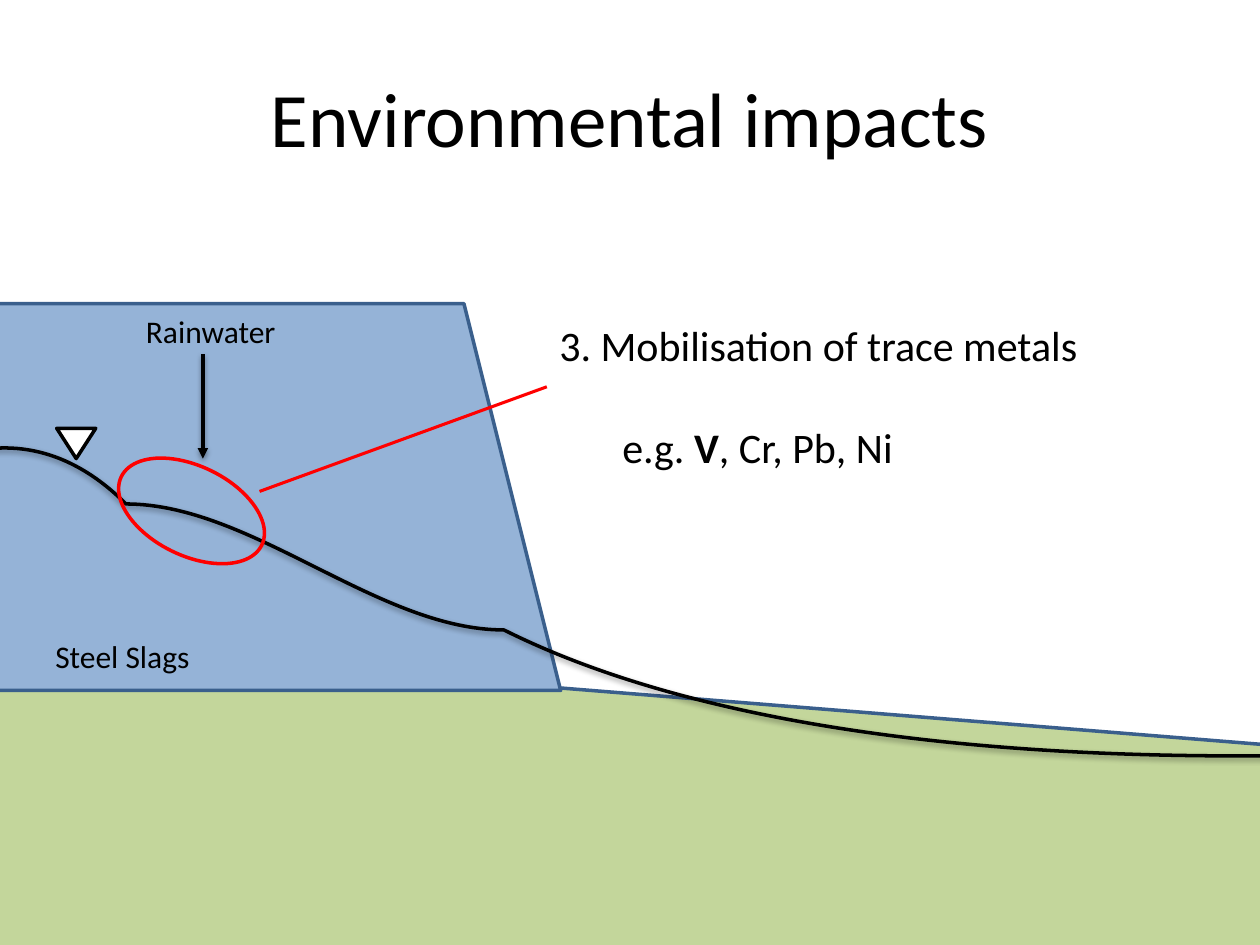
from dataclasses import dataclass

from lxml.etree import SubElement
from pptx import Presentation
from pptx.dml.color import RGBColor
from pptx.enum.shapes import MSO_CONNECTOR, MSO_SHAPE
from pptx.enum.text import MSO_ANCHOR, MSO_AUTO_SIZE, PP_ALIGN
from pptx.oxml.ns import qn
from pptx.util import Inches, Pt


@dataclass(frozen=True)
class Theme:
    font: str = "Calibri"
    black: str = "000000"
    white: str = "FFFFFF"
    red: str = "FF0000"
    ground: str = "C3D69B"
    slag: str = "95B3D7"
    edge: str = "3A5F8C"
    title: int = 44
    body: int = 24
    label: int = 18
    line: float = 2


class Canvas:
    def __init__(self, slide, theme):
        self.s = slide
        self.t = theme

    def stroke(self, sp, color, width=None):
        sp.line.color.rgb = RGBColor.from_string(color)
        sp.line.width = Pt(width or self.t.line)

    def effects(self, sp, shadow):
        """Replace the inherited shadow with a soft one below, or with none."""
        lst = SubElement(sp._element.spPr, qn("a:effectLst"))
        if shadow:
            outer = SubElement(lst, qn("a:outerShdw"), blurRad=str(Pt(3.1)),
                               dist=str(Pt(1.6)), dir="5400000", rotWithShape="0")
            clr = SubElement(outer, qn("a:srgbClr"), val=self.t.black)
            SubElement(clr, qn("a:alpha"), val="38000")

    def shape(self, kind, x, y, w, h, line, fill=None, rotation=0):
        sp = self.s.shapes.add_shape(kind, Inches(x), Inches(y), Inches(w), Inches(h))
        sp.shadow.inherit = False
        sp.rotation = rotation
        if fill:
            sp.fill.solid()
            sp.fill.fore_color.rgb = RGBColor.from_string(fill)
        else:
            sp.fill.background()
        self.stroke(sp, line)
        return sp

    def curve(self, points, color):
        """Draw cubic curves: a start point, then three points per curve."""
        fb = self.s.shapes.build_freeform(*points[0], scale=Inches(1))
        fb.add_line_segments(points[1:], close=False)
        sp = fb.convert_to_shape()
        path = sp._element.spPr.find(".//" + qn("a:path"))
        for i, ln_to in enumerate(path.findall(qn("a:lnTo"))):
            if i % 3 == 0:
                bezier = SubElement(path, qn("a:cubicBezTo"))
            bezier.append(ln_to[0])
            path.remove(ln_to)
        sp.fill.background()
        self.stroke(sp, color)
        self.effects(sp, shadow=True)

    def line(self, start, end, color, width=None, arrow=False):
        cn = self.s.shapes.add_connector(
            MSO_CONNECTOR.STRAIGHT, *(Inches(v) for v in start + end))
        self.stroke(cn, color, width)
        if arrow:
            SubElement(cn.line._get_or_add_ln(), qn("a:tailEnd"), type="triangle")
        self.effects(cn, shadow=arrow)

    def text(self, x, y, w, h, paragraphs, size, wrap=True, gap=0,
             align=PP_ALIGN.LEFT, anchor=MSO_ANCHOR.TOP, grow=True):
        """Add paragraphs, each a list of (text, bold) runs."""
        tb = self.s.shapes.add_textbox(Inches(x), Inches(y), Inches(w), Inches(h))
        tf = tb.text_frame
        tf.word_wrap = wrap
        tf.vertical_anchor = anchor
        tf.auto_size = MSO_AUTO_SIZE.SHAPE_TO_FIT_TEXT if grow else MSO_AUTO_SIZE.NONE
        for i, runs in enumerate(paragraphs):
            p = tf.add_paragraph() if i else tf.paragraphs[0]
            p.alignment = align
            if i:
                p.space_before = Pt(gap)
            for content, bold in runs:
                r = p.add_run()
                r.text = content
                r.font.name = self.t.font
                r.font.size = Pt(size)
                r.font.bold = bold
                r.font.color.rgb = RGBColor.from_string(self.t.black)


def main():
    prs = Presentation()
    prs.slide_width, prs.slide_height = Inches(10), Inches(7.5)
    t = Theme()
    c = Canvas(prs.slides.add_slide(prs.slide_layouts[6]), t)

    c.text(0.5, 0.3, 9, 1.25, [[("Environmental impacts", False)]], t.title,
           align=PP_ALIGN.CENTER, anchor=MSO_ANCHOR.MIDDLE, grow=False)

    # Ground, slag heap and water table
    c.shape(MSO_SHAPE.RECTANGLE, -1.33, 5.48, 11.94, 2.46, t.edge, t.ground, 4.6)
    c.shape(MSO_SHAPE.TRAPEZOID, -1.22, 2.41, 5.67, 3.07, t.edge, t.slag)
    water_table = [(-1.14, 3.7),
                   (-0.7, 3.56), (-0.26, 3.41), (0.63, 3.65),
                   (1.51, 3.9), (2.59, 4.81), (4.16, 5.17),
                   (5.73, 5.53), (8.88, 5.69), (10.05, 5.82),
                   (11.22, 5.94), (11.18, 5.93), (11.15, 5.92)]
    c.curve(water_table, t.black)
    marker = c.shape(MSO_SHAPE.ISOSCELES_TRIANGLE, 0.45, 3.4, 0.31, 0.24, t.black, t.white)
    marker._element.spPr.xfrm.set("flipV", "1")

    c.line((1.61, 2.81), (1.61, 3.64), t.black, arrow=True)
    c.text(1.06, 2.43, 1.24, 0.4, [[("Rainwater", False)]], t.label, wrap=False)
    c.text(0.34, 5.01, 1.28, 0.4, [[("Steel Slags", False)]], t.label, wrap=False)

    # Trace metal callout
    c.shape(MSO_SHAPE.OVAL, 0.9, 3.7, 1.24, 0.71, t.red, rotation=26)
    c.text(4.34, 2.49, 5.69, 1.31,
           [[("3. Mobilisation of trace metals", False)],
            [("\te.g. ", False), ("V", True), (", Cr, Pb, Ni", False)]],
           t.body, gap=29)
    c.line((2.06, 3.9), (4.34, 3.07), t.red, 1.75)

    prs.save("out.pptx")


if __name__ == "__main__":
    main()
